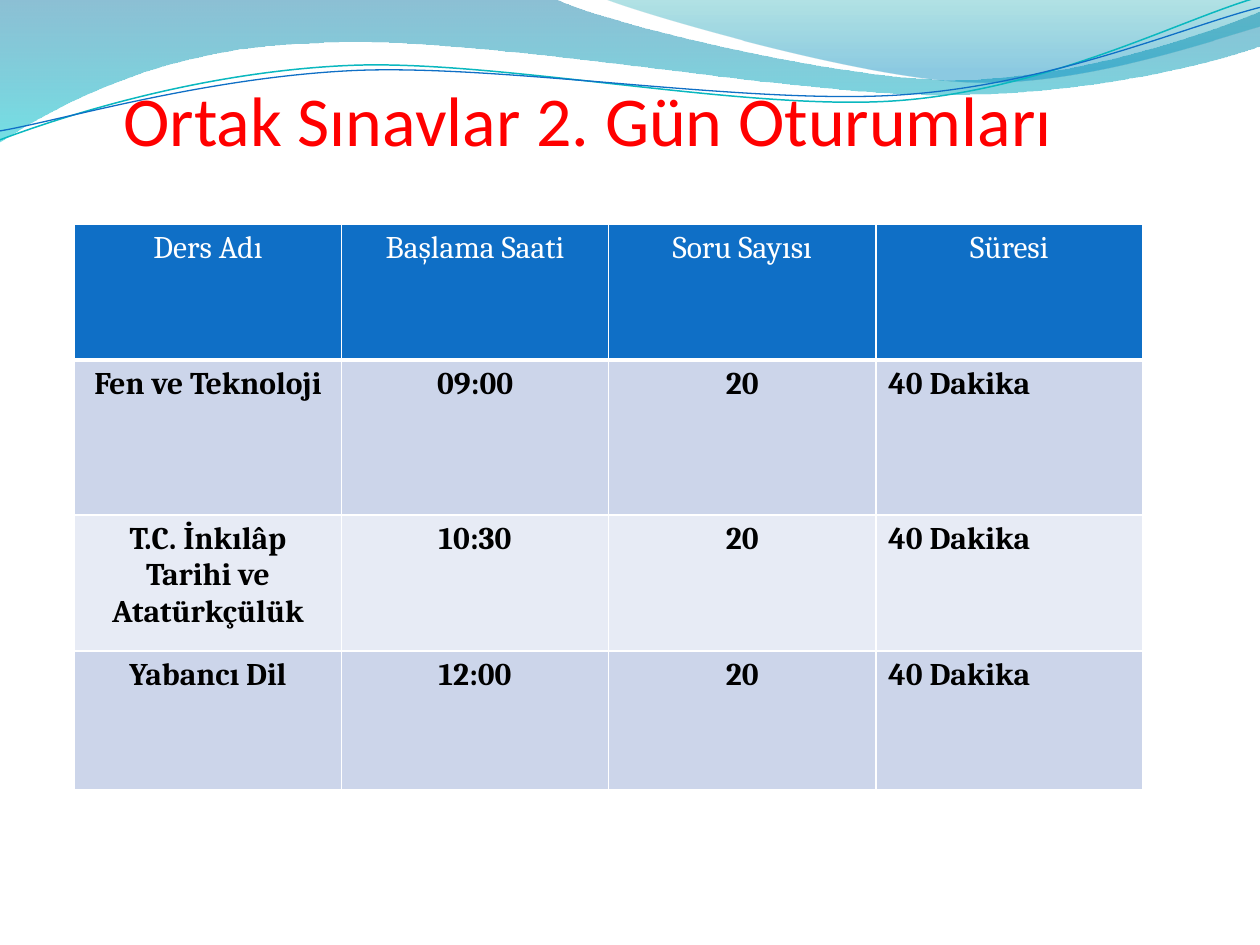
from lxml import etree
from pptx import Presentation
from pptx import util as u
from pptx.dml.color import RGBColor
from pptx.enum import lang, text
from pptx.oxml.ns import qn

COLORS = {
    "title": "FF0000", "header": "0F6FC6", "odd": "CCD5EA", "even": "E7EBF5",
    "white": "FFFFFF", "black": "000000", "teal_line": "0AB8BF", "blue_line": "0F6FC6",
    "deep_blue": "0074A1", "aqua": "00C6CF", "teal": "00A1A9", "sky": "008BBF",
}

WAVES = [
    ([(0, 0), (11.18, -0.03),
      ((12.09, 0.43), (16.87, 1.6), (19.25, 1.6)),
      ((21.67, 1.6), (24.33, 0.66), (25.4, 0.23)), (25.43, 0.91),
      ((24.97, 1.12), (22.1, 1.93), (18.95, 1.91)),
      ((15.8, 1.91), (9.7, 0.71), (6.53, 0.86)),
      ((3.28, 0.91), (1.17, 2.11), (-0.03, 2.87))],
     [(0, "deep_blue", 45), (1, "aqua", 55)]),
    ([(12.17, -0.03),
      ((12.93, 0.28), (17.32, 1.57), (19.53, 1.65)),
      ((21.74, 1.75), (24.41, 0.81), (25.4, 0.53)), (25.4, 0)],
     [(0, "teal", 30), (0.8, "sky", 45)]),
]

STRANDS = [
    ([(0, 2.82),
      ((1.22, 2.36), (4.01, 1.45), (7.04, 1.32)),
      ((10.03, 1.19), (15.06, 2.26), (18.11, 2.03)),
      ((21.16, 1.8), (23.83, 0.38), (25.35, -0.05))], "teal_line", 0.85),
    ([(0, 2.64),
      ((1.19, 2.44), (4.17, 1.55), (7.19, 1.42)),
      ((10.24, 1.3), (15.16, 2.13), (18.21, 1.91)),
      ((21.23, 1.7), (23.9, 0.53), (25.4, 0.15))], "blue_line", 0.75),
]

ROWS = [
    ("Ders Adı", "Başlama Saati", "Soru Sayısı", "Süresi"),
    ("Fen ve Teknoloji", "09:00", "20", "40 Dakika"),
    ("T.C. İnkılâp Tarihi ve Atatürkçülük", "10:30", "20", "40 Dakika"),
    ("Yabancı Dil", "12:00", "20", "40 Dakika"),
]
ROW_HEIGHTS = [2.74, 3.12, 2.74, 2.81]


def rgb(name):
    return RGBColor.from_string(COLORS[name])


def is_bezier(part):
    return len(part) == 3


def add_curve(s, outline, left, top, close):
    points = []
    for part in outline:
        points.extend(part if is_bezier(part) else [part])
    points = [(u.Cm(left + x), u.Cm(top + y)) for x, y in points]
    builder = s.shapes.build_freeform(*points[0])
    builder.add_line_segments(points[1:], close=close)
    sp = builder.convert_to_shape()
    sp.shadow.inherit = False
    segments = iter(list(sp._element.iter(qn("a:lnTo"))))
    for part in outline[1:]:
        first = next(segments)
        if is_bezier(part):
            first.tag = qn("a:cubicBezTo")
            for _ in range(2):
                extra = next(segments)
                first.append(extra[0])
                extra.getparent().remove(extra)
    return sp


def add_waves(s, left, top):
    for outline, stops in WAVES:
        sp = add_curve(s, outline, left, top, True)
        sp.line.fill.background()
        sp.fill.gradient()
        sp.fill.gradient_angle = 270
        for stop, (position, color, _) in zip(sp.fill.gradient_stops, stops):
            stop.position = position
            stop.color.rgb = rgb(color)
        for clr, (_, _, opacity) in zip(sp._element.spPr.iter(qn("a:srgbClr")), stops):
            etree.SubElement(clr, qn("a:alpha"), val=str(opacity * 1000))
    for outline, color, width in STRANDS:
        sp = add_curve(s, outline, left, top, False)
        sp.fill.background()
        sp.line.color.rgb = rgb(color)
        sp.line.width = u.Pt(width)


def add_run(p, words, font, size, color, bold=False):
    r = p.add_run()
    r.text = words
    r.font.name = font
    r.font.size = u.Pt(size)
    r.font.bold = bold
    r.font.language_id = lang.MSO_LANGUAGE_ID.TURKISH
    r.font.color.rgb = rgb(color)


def add_title(s, left, top, width, height):
    sp = s.shapes.title
    sp._element.getparent().append(sp._element)
    sp.left, sp.top, sp.width, sp.height = map(u.Cm, (left, top, width, height))
    tf = sp.text_frame
    tf.word_wrap = True
    tf.auto_size = text.MSO_AUTO_SIZE.NONE
    tf.vertical_anchor = text.MSO_ANCHOR.BOTTOM
    tf.margin_left = tf.margin_right = tf.margin_bottom = 0
    tf.margin_top = u.Cm(0.13)
    p = tf.paragraphs[0]
    p.alignment = text.PP_ALIGN.LEFT
    add_run(p, "Ortak Sınavlar 2. Gün Oturumları", "Calibri", 40, "title")


def set_borders(cell, widths):
    tc_pr = cell._tc.get_or_add_tcPr()
    for side, width in widths.items():
        ln = etree.SubElement(tc_pr, qn(f"a:ln{side}"), w=str(u.Pt(width)))
        fill = etree.SubElement(ln, qn("a:solidFill"))
        etree.SubElement(fill, qn("a:srgbClr"), val=COLORS["white"])


def add_schedule(s, left, top, width):
    frame = s.shapes.add_table(len(ROWS), len(ROWS[0]), u.Cm(left), u.Cm(top),
                               u.Cm(width), u.Cm(sum(ROW_HEIGHTS)))
    table = frame.table
    for col in table.columns:
        col.width = u.Cm(width / len(ROWS[0]))
    for i, (words, height) in enumerate(zip(ROWS, ROW_HEIGHTS)):
        table.rows[i].height = u.Cm(height)
        header = i == 0
        fill = "header" if header else ("odd" if i % 2 else "even")
        for j, word in enumerate(words):
            cell = table.cell(i, j)
            set_borders(cell, {"L": 1, "R": 1, "T": 1, "B": 3 if header else 1})
            cell.fill.solid()
            cell.fill.fore_color.rgb = rgb(fill)
            p = cell.text_frame.paragraphs[0]
            duration = not header and j == len(words) - 1
            p.alignment = text.PP_ALIGN.LEFT if duration else text.PP_ALIGN.CENTER
            add_run(p, word, "Cambria", 18, "white" if header else "black", not header)


def main():
    prs = Presentation()
    prs.slide_width, prs.slide_height = u.Cm(25.4), u.Cm(19.05)
    s = prs.slides.add_slide(prs.slide_layouts[5])
    add_waves(s, 0, 0)
    add_title(s, 2.49, 0.05, 20.12, 3.18)
    add_schedule(s, 1.5, 4.52, 21.54)
    prs.save("out.pptx")


if __name__ == "__main__":
    main()
